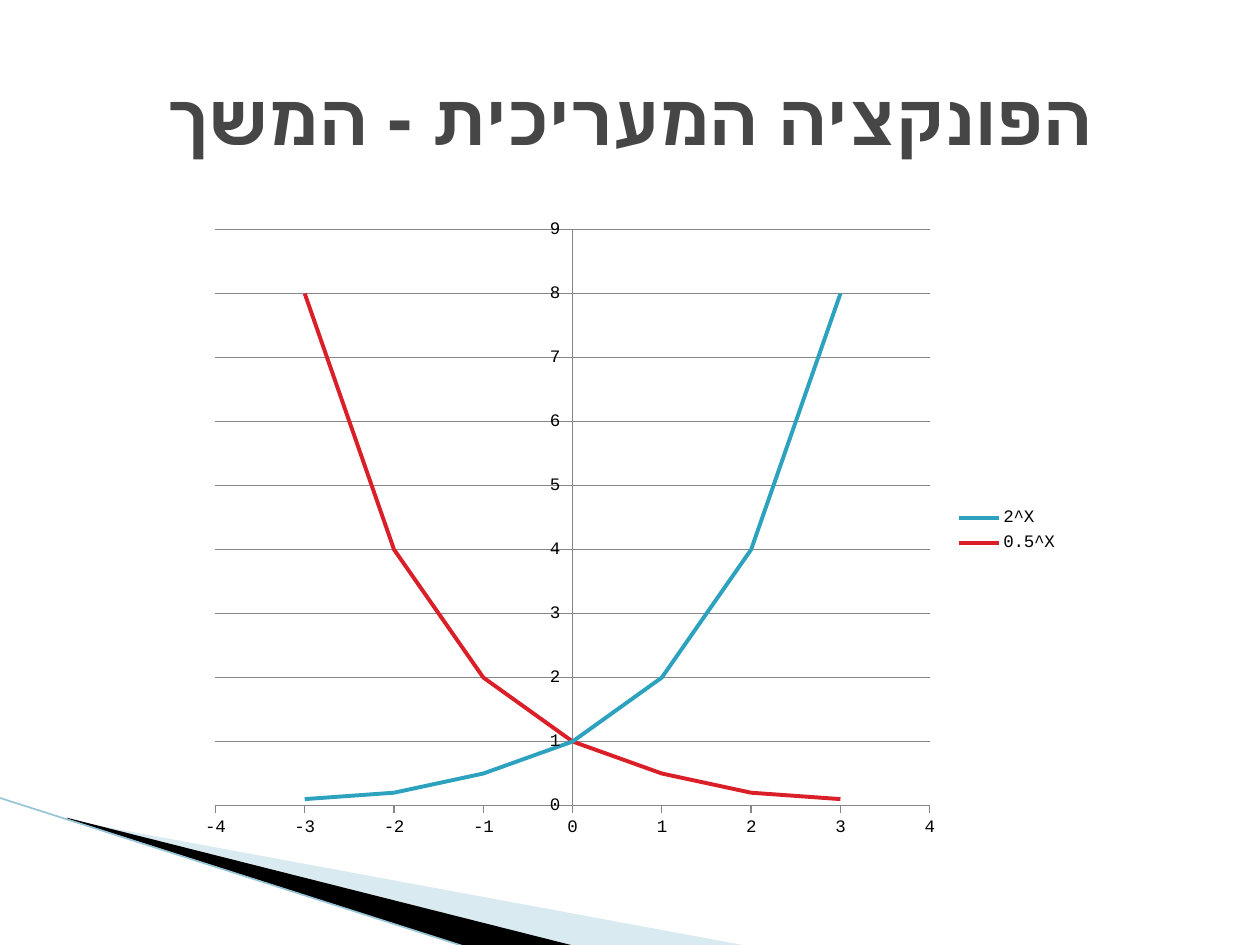
from dataclasses import dataclass

from lxml import etree
from pptx import Presentation
from pptx.chart.data import XyChartData
from pptx.dml.color import RGBColor
from pptx.enum.chart import XL_CHART_TYPE, XL_LEGEND_POSITION, XL_TICK_MARK
from pptx.enum.shapes import MSO_CONNECTOR
from pptx.enum.text import MSO_ANCHOR, PP_ALIGN
from pptx.oxml import parse_xml
from pptx.oxml.ns import nsdecls, qn
from pptx.util import Inches, Pt

SMOOTH_SCATTER = XL_CHART_TYPE.XY_SCATTER_SMOOTH_NO_MARKERS
LEGEND_RIGHT = XL_LEGEND_POSITION.RIGHT
TICK_OUTSIDE = XL_TICK_MARK.OUTSIDE
STRAIGHT = MSO_CONNECTOR.STRAIGHT
MIDDLE = MSO_ANCHOR.MIDDLE
CENTER = PP_ALIGN.CENTER

FONT = "Courier New"
COLORS = {
    "title": "464646",
    "text": "000000",
    "grid": "868686",
    "pale": "A0CBDC",
    "dark": "000000",
    "edge": "97C5D8",
    "growth": "2DA2BF",
    "decay": "DA1F28",
}


@dataclass
class Wedge:
    points: list[tuple[float, float]]
    color: str
    opacity: int


@dataclass
class Curve:
    name: str
    base: float
    color: str


WEDGES = [
    Wedge([(0.55, 6.51), (5.95, 7.51), (4.56, 7.51), (0.55, 6.5)], "pale", 40),
    Wedge([(0.53, 6.49), (4.57, 7.51), (3.72, 7.52), (0.54, 6.5)], "dark", 100),
]
CURVES = [Curve("2^X", 2, "growth"), Curve("0.5^X", 0.5, "decay")]


def rgb(name: str) -> RGBColor:
    return RGBColor.from_string(COLORS[name])


def draw_wedge(page, wedge: Wedge) -> None:
    corners = [(Inches(x), Inches(y)) for x, y in wedge.points]
    builder = page.shapes.build_freeform(*corners[0])
    builder.add_line_segments(corners[1:], close=True)
    shape = builder.convert_to_shape()
    shape.shadow.inherit = False
    shape.line.fill.background()
    shape.fill.solid()
    shape.fill.fore_color.rgb = rgb(wedge.color)
    if wedge.opacity < 100:
        color = shape.fill._xPr.find(".//" + qn("a:srgbClr"))
        etree.SubElement(color, qn("a:alpha"), val=str(wedge.opacity * 1000))


def draw_edge(page) -> None:
    edge = page.shapes.add_connector(
        STRAIGHT, Inches(-0.01), Inches(6.33), Inches(3.71), Inches(7.52)
    )
    edge.line.color.rgb = rgb("edge")
    edge.line.width = Pt(0.95)
    etree.SubElement(edge._element.spPr, qn("a:effectLst"))


def write_title(page, text: str) -> None:
    title = page.shapes.title
    title.left, title.top = Inches(0.5), Inches(0.3)
    title.width, title.height = Inches(9), Inches(1.25)
    frame = title.text_frame
    frame.text = text
    frame.vertical_anchor = MIDDLE
    para = frame.paragraphs[0]
    para.alignment = CENTER
    para._p.get_or_add_pPr().set("rtl", "1")
    font = para.runs[0].font
    font.name, font.size, font.bold = FONT, Pt(41), True
    font.color.rgb = rgb("title")


def style_axis(axis, low: int, high: int) -> None:
    axis.minimum_scale, axis.maximum_scale = low, high
    axis.major_unit = 1
    axis.major_tick_mark = TICK_OUTSIDE
    axis.format.line.color.rgb = rgb("grid")
    axis.format.line.width = Pt(0.75)
    axis.tick_labels.number_format = "General"
    axis.tick_labels.number_format_is_linked = False


def place_plot(chart, x: float, y: float, width: float, height: float) -> None:
    plot_area = chart._chartSpace.chart.plotArea
    for old in plot_area.findall(qn("c:layout")):
        plot_area.remove(old)
    plot_area.insert(0, parse_xml(
        f'<c:layout {nsdecls("c")}><c:manualLayout><c:layoutTarget val="inner"/>'
        '<c:xMode val="edge"/><c:yMode val="edge"/>'
        f'<c:x val="{x}"/><c:y val="{y}"/><c:w val="{width}"/><c:h val="{height}"/>'
        "</c:manualLayout></c:layout>"
    ))


def draw_chart(page, curves: list[Curve]) -> None:
    data = XyChartData()
    for curve in curves:
        series = data.add_series(curve.name)
        for x in range(-3, 4):
            series.add_data_point(x, round(curve.base ** x, 1))
    chart = page.shapes.add_chart(
        SMOOTH_SCATTER, Inches(1.5), Inches(1.67), Inches(7), Inches(5.08), data
    ).chart
    chart.font.name, chart.font.size = FONT, Pt(10)
    chart.font.color.rgb = rgb("text")
    chart.has_title = False
    chart.has_legend = True
    chart.legend.position = LEGEND_RIGHT
    chart.legend.include_in_layout = False
    chart.plots[0].vary_by_categories = False
    style_axis(chart.category_axis, -4, 4)
    style_axis(chart.value_axis, 0, 9)
    chart.category_axis.has_major_gridlines = False
    chart.value_axis.has_major_gridlines = True
    grid = chart.value_axis.major_gridlines.format.line
    grid.color.rgb, grid.width = rgb("grid"), Pt(0.75)
    for series, curve in zip(chart.plots[0].series, curves):
        series.smooth = True
        series.format.line.color.rgb = rgb(curve.color)
        series.format.line.width = Pt(2.25)
    place_plot(chart, 0.03, 0.03, 0.81, 0.9)


def main() -> None:
    deck = Presentation()
    deck.slide_width, deck.slide_height = Inches(10), Inches(7.5)
    page = deck.slides.add_slide(deck.slide_layouts[5])
    for wedge in WEDGES:
        draw_wedge(page, wedge)
    draw_edge(page)
    write_title(page, "הפונקציה המעריכית - המשך")
    draw_chart(page, CURVES)
    deck.save("out.pptx")


if __name__ == "__main__":
    main()
